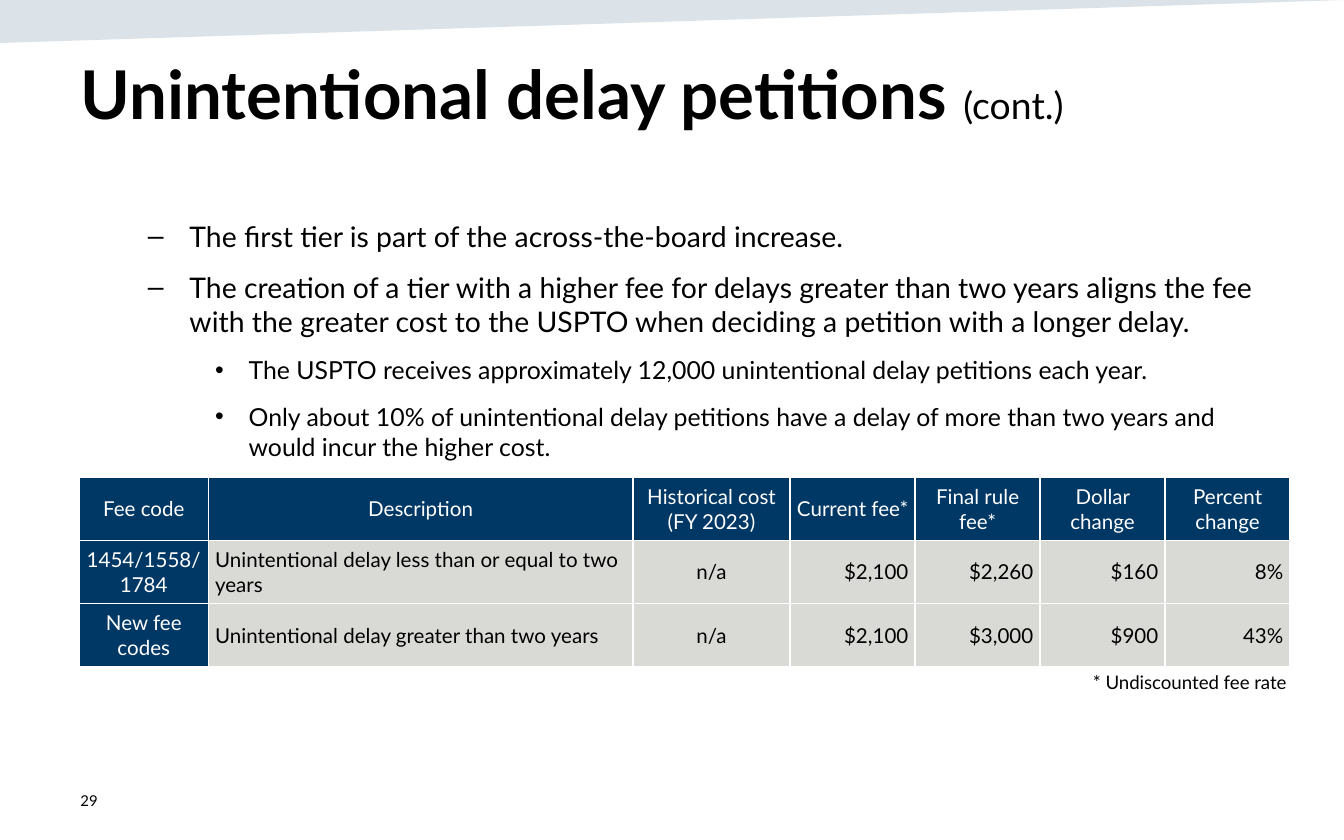
from lxml.etree import SubElement as Sub
from pptx import Presentation
from pptx.dml.color import RGBColor as RGB
from pptx.enum.text import MSO_ANCHOR as Anchor, MSO_AUTO_SIZE as Auto, PP_ALIGN as Align
from pptx.oxml.ns import qn
from pptx.util import Inches, Pt

FONT = "Lato"
BLACK, WHITE, NAVY, GRAY = "000000", "FFFFFF", "003865", "D9D9D6"


def paint(fill, color):
    fill.solid()
    fill.fore_color.rgb = RGB.from_string(color)


def write(para, text, size, color=BLACK, bold=False):
    run = para.add_run()
    run.text = text
    run.font.name, run.font.size, run.font.bold = FONT, Pt(size), bold
    paint(run.font.fill, color)


prs = Presentation()
prs.slide_width, prs.slide_height = Inches(10), Inches(6.25)
slide = prs.slides.add_slide(prs.slide_layouts[1])
shapes = slide.shapes

# Pale wedge along the top edge, behind everything else
pen = shapes.build_freeform(0, 0)
pen.add_line_segments([(0, Inches(0.32)), (Inches(10), 0)])
wedge = pen.convert_to_shape()
wedge.shadow.inherit = False
wedge.line.fill.background()
paint(wedge.fill, "164469")
tint = wedge.fill._xPr.find(qn("a:solidFill"))[0]
Sub(tint, qn("a:alpha"), val="15000")
shapes._spTree.insert(2, wedge._element)

# Title
title = shapes.title
title.left, title.top = Inches(0.5), Inches(0.34)
title.width, title.height = Inches(9), Inches(1.04)
frame = title.text_frame
frame.auto_size, frame.vertical_anchor = Auto.NONE, Anchor.TOP
para = frame.paragraphs[0]
para.alignment = Align.LEFT
write(para, "Unintentional delay petitions ", 36, bold=True)
write(para, "(cont.)", 20)

# Bullets: level, text
points = [
    (1, "The first tier is part of the across-the-board increase."),
    (1, "The creation of a tier with a higher fee for delays greater than two years "
        "aligns the fee with the greater cost to the USPTO when deciding a petition "
        "with a longer delay."),
    (2, "The USPTO receives approximately 12,000 unintentional delay petitions each year."),
    (2, "Only about 10% of unintentional delay petitions have a delay of more than "
        "two years and would incur the higher cost."),
]
# Level: text size, left margin, hanging indent, mark
styles = {1: (15.2, 0.81, 0.31, "–"), 2: (13.3, 1.25, 0.25, "•")}
body = slide.placeholders[1]
body.left, body.top = Inches(0.5), Inches(1.58)
body.width, body.height = Inches(9), Inches(2.04)
frame = body.text_frame
frame.auto_size, frame.vertical_anchor = Auto.NONE, Anchor.TOP
for i, (level, text) in enumerate(points):
    size, margin, hang, mark = styles[level]
    para = frame.paragraphs[0] if i == 0 else frame.add_paragraph()
    para.level, para.space_before = level, Pt(9)
    props = para._p.get_or_add_pPr()
    props.set("marL", str(Inches(margin)))
    props.set("indent", str(-Inches(hang)))
    Sub(props, qn("a:buFont"), typeface="Arial")
    Sub(props, qn("a:buChar"), char=mark)
    write(para, text, size)

# Fee table
rows = [
    ["Fee code", "Description", "Historical cost\n(FY 2023)", "Current fee*",
     "Final rule fee*", "Dollar change", "Percent change"],
    ["1454/1558/1784", "Unintentional delay less than or equal to two years", "n/a",
     "$2,100", "$2,260", "$160", "8%"],
    ["New fee codes", "Unintentional delay greater than two years", "n/a",
     "$2,100", "$3,000", "$900", "43%"],
]
widths = [0.96, 3.16, 1.17] + [0.93] * 4
aligns = [Align.CENTER, Align.LEFT, Align.CENTER] + [Align.RIGHT] * 4
table = shapes.add_table(3, 7, Inches(0.59), Inches(3.55), Inches(9.01), Inches(1.4)).table
table.horz_banding = False
for col, width in zip(table.columns, widths):
    col.width = Inches(width)
for r, row in enumerate(rows):
    table.rows[r].height = Inches(0.47)
    for c, text in enumerate(row):
        cell = table.cell(r, c)
        dark = r == 0 or c == 0
        cell.vertical_anchor = Anchor.MIDDLE
        cell.margin_left = cell.margin_right = Inches(0.05)
        cell.margin_top = cell.margin_bottom = Inches(0.05)
        # Borders come before the fill in the cell properties
        props = cell._tc.get_or_add_tcPr()
        for side in ("lnL", "lnR", "lnT", "lnB"):
            line = Sub(props, qn("a:" + side), w=str(Pt(1)))
            Sub(Sub(line, qn("a:solidFill")), qn("a:srgbClr"), val=WHITE)
        paint(cell.fill, NAVY if dark else GRAY)
        for i, part in enumerate(text.split("\n")):
            para = cell.text_frame.paragraphs[0] if i == 0 else cell.text_frame.add_paragraph()
            para.alignment = aligns[c] if r else Align.CENTER
            if r:
                para.space_before = para.space_after = Pt(6)
            write(para, part, 11, WHITE if dark else BLACK)

# Footnote and page number
notes = [
    ("* Undiscounted fee rate", 10, Align.RIGHT, Anchor.TOP, (0.79, 4.94, 8.88, 0.27)),
    ("29", 8, Align.LEFT, Anchor.MIDDLE, (0.5, 5.79, 2.25, 0.33)),
]
for text, size, align, anchor, place in notes:
    frame = shapes.add_textbox(*map(Inches, place)).text_frame
    frame.word_wrap, frame.vertical_anchor = True, anchor
    frame.paragraphs[0].alignment = align
    write(frame.paragraphs[0], text, size)

prs.save("out.pptx")
